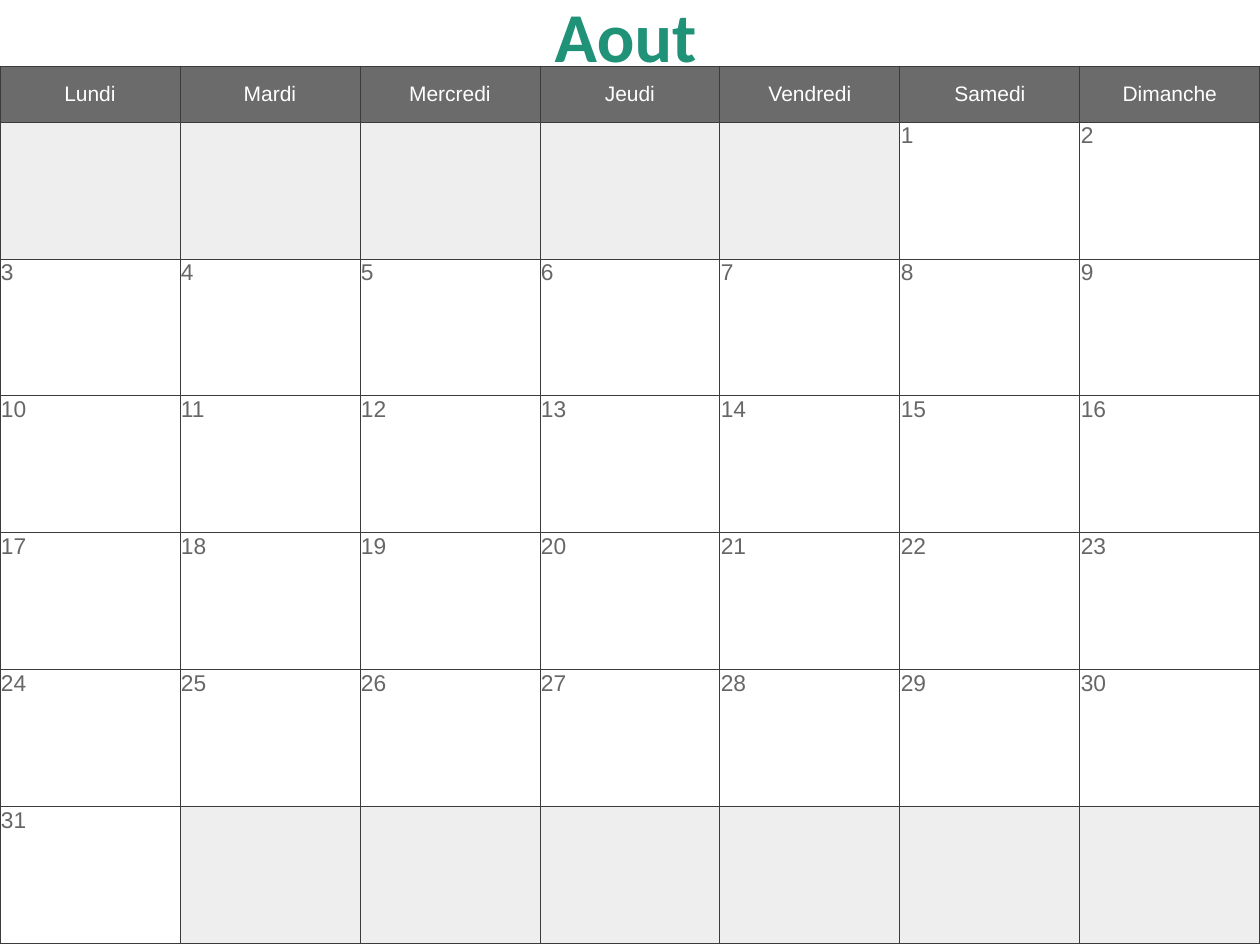
import pptx
import pptx.util
import pptx.dml.color
import pptx.enum.text
import pptx.oxml
import pptx.oxml.ns

RGBColor = pptx.dml.color.RGBColor
PP_ALIGN = pptx.enum.text.PP_ALIGN
MSO_ANCHOR = pptx.enum.text.MSO_ANCHOR

GREEN = RGBColor(0x20, 0x92, 0x77)
HEADER_GRAY = RGBColor(0x6B, 0x6B, 0x6B)
DAY_GRAY = RGBColor(0x67, 0x67, 0x67)
EMPTY_GRAY = RGBColor(0xEE, 0xEE, 0xEE)
BORDER_GRAY = RGBColor(0x3B, 0x3B, 0x3B)
WHITE = RGBColor(0xFF, 0xFF, 0xFF)

WEEKDAYS = ["Lundi", "Mardi", "Mercredi", "Jeudi", "Vendredi", "Samedi", "Dimanche"]
WEEKS = 6
FIRST_WEEKDAY = 5
LAST_DAY = 31
HEADER_HEIGHT = 56
WEEK_HEIGHT = 137


def px(n):
    return pptx.util.Emu(n * 914400 // 126)


def set_font(p, name, size, color, bold=False):
    p.font.name = name
    p.font.size = pptx.util.Pt(size)
    p.font.color.rgb = color
    p.font.bold = bold


def set_borders(cell):
    tc_pr = cell._tc.get_or_add_tcPr()
    for i, side in enumerate(("lnL", "lnR", "lnT", "lnB")):
        tc_pr.insert(i, pptx.oxml.parse_xml(
            f'<a:{side} {pptx.oxml.ns.nsdecls("a")} w="6350"><a:solidFill>'
            f'<a:srgbClr val="{BORDER_GRAY}"/></a:solidFill></a:{side}>'))


def fill_cell(cell, fill, text="", size=13, color=DAY_GRAY,
              align=PP_ALIGN.LEFT, anchor=MSO_ANCHOR.TOP):
    cell.margin_left = cell.margin_right = cell.margin_top = px(1)
    cell.margin_bottom = 0
    cell.vertical_anchor = anchor
    cell.fill.solid()
    cell.fill.fore_color.rgb = fill
    set_borders(cell)
    p = cell.text_frame.paragraphs[0]
    p.text = text
    p.alignment = align
    set_font(p, "Arial", size, color)


def add_calendar(s):
    columns = len(WEEKDAYS)
    height = HEADER_HEIGHT + WEEKS * WEEK_HEIGHT
    table = s.shapes.add_table(WEEKS + 1, columns, 0, px(66), px(1260), px(height)).table
    table.rows[0].height = px(HEADER_HEIGHT)
    for column, weekday in enumerate(WEEKDAYS):
        table.columns[column].width = px(180)
        fill_cell(table.cell(0, column), HEADER_GRAY, weekday, 12, WHITE,
                  PP_ALIGN.CENTER, MSO_ANCHOR.MIDDLE)
    for week in range(WEEKS):
        table.rows[week + 1].height = px(WEEK_HEIGHT)
        for column in range(columns):
            day = week * columns + column - FIRST_WEEKDAY + 1
            cell = table.cell(week + 1, column)
            if 1 <= day <= LAST_DAY:
                fill_cell(cell, WHITE, str(day))
            else:
                fill_cell(cell, EMPTY_GRAY)


def add_title(s, text):
    tf = s.shapes.add_textbox(px(541), px(-14), px(169), px(97)).text_frame
    tf.word_wrap = False
    tf.auto_size = pptx.enum.text.MSO_AUTO_SIZE.SHAPE_TO_FIT_TEXT
    p = tf.paragraphs[0]
    p.text = text
    p.alignment = PP_ALIGN.CENTER
    set_font(p, "Calibri", 40, GREEN, True)


def main():
    prs = pptx.Presentation()
    prs.slide_width = px(1260)
    prs.slide_height = px(945)
    s = prs.slides.add_slide(prs.slide_layouts[6])
    add_calendar(s)
    add_title(s, "Aout")
    prs.save("out.pptx")


if __name__ == "__main__":
    main()
